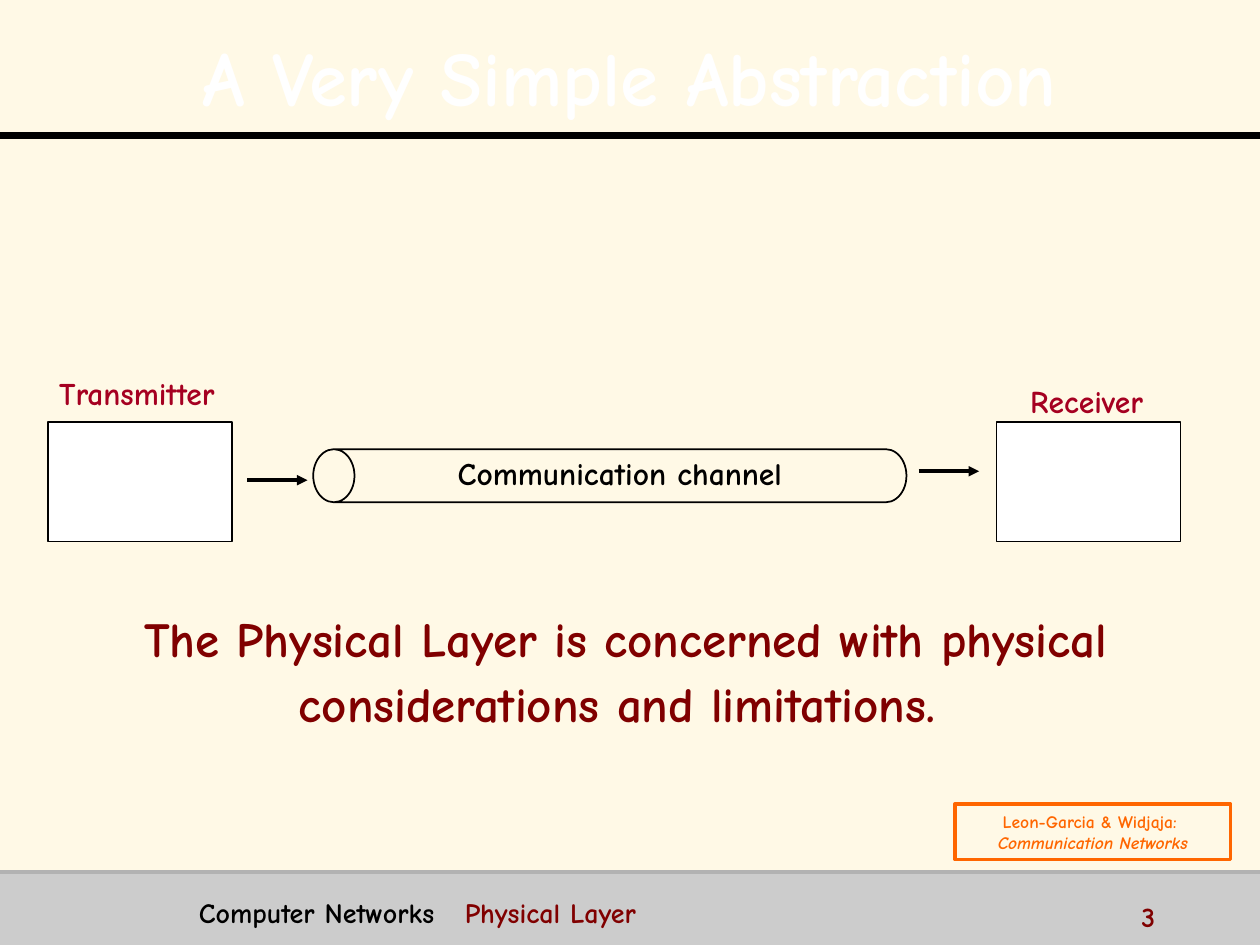
from lxml.etree import SubElement
from pptx import Presentation
from pptx.dml.color import RGBColor
from pptx.enum.shapes import MSO_CONNECTOR, MSO_SHAPE
from pptx.enum.text import MSO_ANCHOR, PP_ALIGN
from pptx.oxml import parse_xml
from pptx.oxml.ns import nsdecls, qn
from pptx.util import Cm, Pt

COLORS = {
    "cream": "FFF9E6", "band": "CCCCCC", "rule": "B2B2B2", "black": "000000",
    "white": "FFFFFF", "maroon": "800000", "crimson": "A50021", "orange": "FF6600",
}
RGB = {name: RGBColor.from_string(value) for name, value in COLORS.items()}
FONT = "Comic Neue"
SHADOW = (
    f'<a:effectLst {nsdecls("a")}><a:outerShdw dist="25400" dir="2700000">'
    '<a:srgbClr val="000000"/></a:outerShdw></a:effectLst>'
)

prs = Presentation()
prs.slide_width, prs.slide_height = Cm(25.4), Cm(19.05)
s = prs.slides.add_slide(prs.slide_layouts[6])
s.background.fill.solid()
s.background.fill.fore_color.rgb = RGB["cream"]


def add_shape(kind, box, fill=None, line=None, width=1):
    sp = s.shapes.add_shape(kind, *map(Cm, box))
    sp.shadow.inherit = False
    if fill:
        sp.fill.solid()
        sp.fill.fore_color.rgb = RGB[fill]
    else:
        sp.fill.background()
    if line:
        sp.line.color.rgb = RGB[line]
        sp.line.width = Pt(width)
    else:
        sp.line.fill.background()
    return sp


def style_run(p, text, size, color, italic=None, shadow=False):
    """Append a bold run to the paragraph."""
    r = p.add_run()
    r.text = text
    font = {"name": FONT, "size": Pt(size), "bold": True, "italic": italic}
    for name, value in font.items():
        setattr(r.font, name, value)
    r.font.color.rgb = RGB[color]
    if shadow:
        r.font.fill._xPr.find(qn("a:solidFill")).addnext(parse_xml(SHADOW))


# Footer band, end boxes and channel
add_shape(MSO_SHAPE.RECTANGLE, (0, 17.58, 25.4, 1.47), "band")
for left in (0.97, 20.09):
    add_shape(MSO_SHAPE.RECTANGLE, (left, 8.51, 3.71, 2.41), "white", "black")
channel = add_shape(MSO_SHAPE.CAN, (11.76, 3.61, 1.07, 11.96), line="black")
channel.adjustments[0] = 0.778
channel.rotation = 270

# Rules and arrows: start x, end x, y, colour, width, arrowhead
for x1, x2, y, color, width, arrow in (
    (0, 25.4, 2.74, "black", 4, False),
    (0, 25.4, 17.58, "rule", 2, False),
    (4.98, 6.2, 9.68, "black", 2, True),
    (18.52, 19.74, 9.5, "black", 2, True),
):
    cx = s.shapes.add_connector(MSO_CONNECTOR.STRAIGHT, Cm(x1), Cm(y), Cm(x2), Cm(y))
    cx.line.color.rgb = RGB[color]
    cx.line.width = Pt(width)
    if arrow:
        SubElement(cx.line._get_or_add_ln(), qn("a:tailEnd"), type="triangle")
    SubElement(cx._element.spPr, qn("a:effectLst"))

# Single-run texts: text, box, size, colour, format
big = {"wrap": True, "anchor": MSO_ANCHOR.MIDDLE, "spacing": 1.1, "shadow": True}
centred = {"align": PP_ALIGN.CENTER}
for text, box, size, color, fmt in (
    ("A Very Simple Abstraction", (0.5, 0.33, 24.4, 2.21), 44, "white", big | centred),
    ("The Physical Layer is concerned with physical considerations and limitations. ",
     (0.41, 11.79, 24.4, 3.33), 28, "maroon", big | centred),
    ("Transmitter", (0.84, 7.42, 3.84, 1.02), 18, "crimson", centred),
    ("Receiver", (20.47, 7.57, 2.87, 1.02), 18, "crimson", centred),
    ("Communication channel", (8.33, 9.02, 8.33, 1.02), 18, "black", centred | {"wrap": True}),
    ("3", (22.76, 18.01, 2.54, 0.64), 16, "maroon", {"wrap": True}),
):
    tf = s.shapes.add_textbox(*map(Cm, box)).text_frame
    tf.word_wrap = fmt.get("wrap", False)
    tf.vertical_anchor = fmt.get("anchor", MSO_ANCHOR.TOP)
    p = tf.paragraphs[0]
    p.alignment = fmt.get("align", PP_ALIGN.LEFT)
    p.line_spacing = fmt.get("spacing")
    style_run(p, text, size, color, shadow=fmt.get("shadow", False))

# Footer text, with a tab stop between course and topic
tf = s.shapes.add_textbox(Cm(3.76), Cm(17.93), Cm(18.3), Cm(0.79)).text_frame
tf.word_wrap = True
p = tf.paragraphs[0]
tabs = SubElement(p._p.get_or_add_pPr(), qn("a:tabLst"))
SubElement(tabs, qn("a:tab"), pos=str(Cm(5.36)), algn="l")
style_run(p, "Computer Networks\t", 16, "black")
style_run(p, "Physical Layer", 16, "maroon")

# Citation
citation = add_shape(MSO_SHAPE.RECTANGLE, (19.25, 16.21, 5.56, 1.12), line="orange", width=2)
tf = citation.text_frame
tf.word_wrap = True
tf.vertical_anchor = MSO_ANCHOR.MIDDLE
for p, text, italic in (
    (tf.paragraphs[0], "Leon-Garcia & Widjaja: ", None),
    (tf.add_paragraph(), "Communication Networks", True),
):
    p.alignment = PP_ALIGN.CENTER
    style_run(p, text, 10, "orange", italic)

prs.save("out.pptx")
